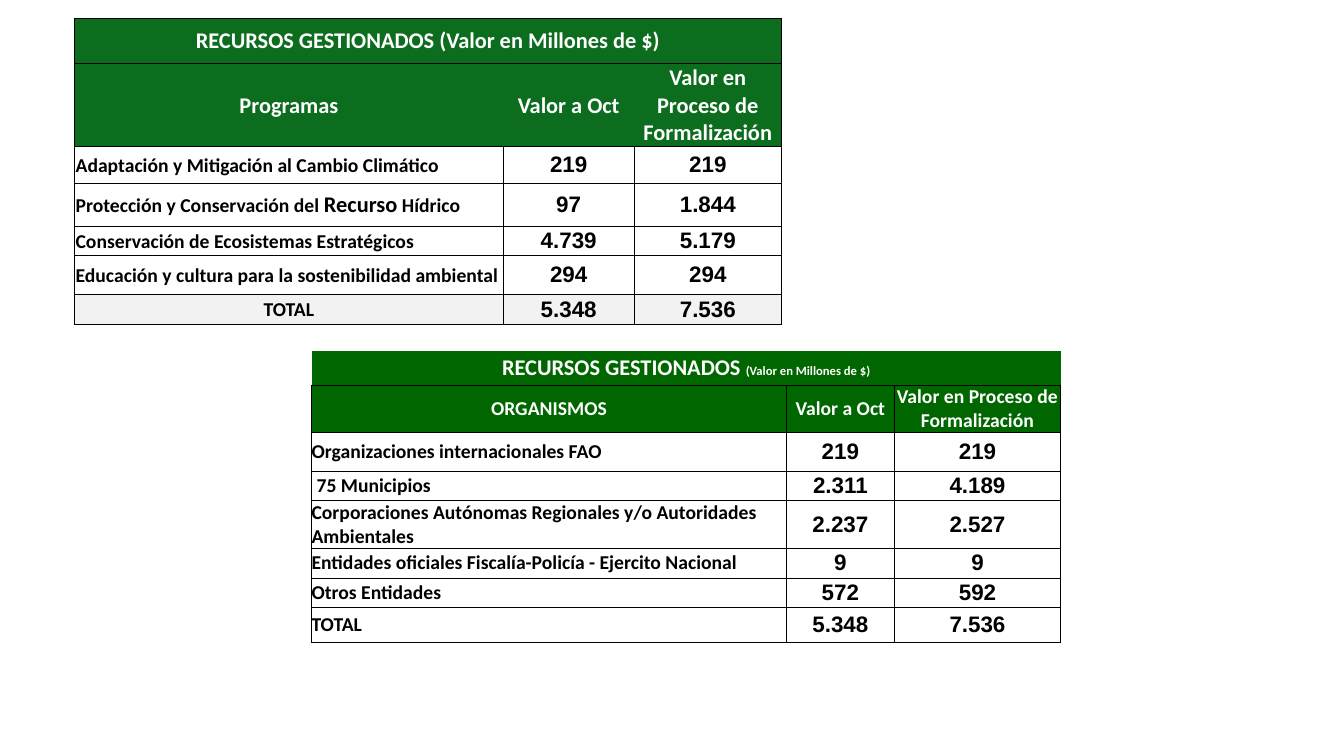
import pptx
import pptx.dml.color
import pptx.enum.text
import pptx.oxml
import pptx.oxml.ns
import pptx.util
from lxml import etree

RGBColor = pptx.dml.color.RGBColor
Inches = pptx.util.Inches
Pt = pptx.util.Pt
CENTER = pptx.enum.text.PP_ALIGN.CENTER
LEFT = pptx.enum.text.PP_ALIGN.LEFT

BLACK = RGBColor(0x00, 0x00, 0x00)
WHITE = RGBColor(0xFF, 0xFF, 0xFF)
GRAY = RGBColor(0xF2, 0xF2, 0xF2)
PROGRAM_GREEN = RGBColor(0x0C, 0x6D, 0x1F)
ORGANISM_GREEN = RGBColor(0x00, 0x66, 0x00)
NO_STYLE = "{2D5ABB26-0587-4C30-8999-92F81FD0307C}"

# A label is a list of (text, size) runs.
PROGRAMS = {
    "position": (0.74, 0.18),
    "columns": (4.25, 1.3, 1.46),
    "rows": (0.45, 0.8, 0.36, 0.43, 0.29, 0.39, 0.29),
    "title": [("RECURSOS GESTIONADOS (Valor en Millones de $)", 16)],
    "title_sides": "LRTB",
    "header": ("Programas", "Valor a Oct", "Valor en Proceso de Formalización"),
    "header_size": 16,
    "header_grid": False,
    "header_fill": PROGRAM_GREEN,
    "body_fill": WHITE,
    "total_fill": GRAY,
    "total_alignment": CENTER,
    "inset": 0.01,
    "indented_rows": (),
    "body": [
        ([("Adaptación y Mitigación al Cambio Climático", 14)], "219", "219"),
        ([("Protección y Conservación del ", 14), ("Recurso", 16), (" Hídrico", 14)], "97", "1.844"),
        ([("Conservación de Ecosistemas Estratégicos", 14)], "4.739", "5.179"),
        ([("Educación y cultura para la sostenibilidad ambiental", 14)], "294", "294"),
        ([("TOTAL", 14)], "5.348", "7.536"),
    ],
}
ORGANISMS = {
    "position": (3.09, 3.48),
    "columns": (4.71, 1.07, 1.65),
    "rows": (0.34, 0.47, 0.38, 0.29, 0.48, 0.29, 0.29, 0.35),
    "title": [("RECURSOS GESTIONADOS ", 16), ("(Valor en Millones de $)", 9)],
    "title_sides": "B",
    "header": ("ORGANISMOS", "Valor a Oct", "Valor en Proceso de Formalización"),
    "header_size": 14,
    "header_grid": True,
    "header_fill": ORGANISM_GREEN,
    "body_fill": None,
    "total_fill": None,
    "total_alignment": LEFT,
    "inset": 0,
    "indented_rows": (1,),
    "body": [
        ([("Organizaciones internacionales FAO", 14)], "219", "219"),
        ([("75 Municipios", 14)], "2.311", "4.189"),
        ([("Corporaciones Autónomas Regionales y/o Autoridades Ambientales", 14)], "2.237", "2.527"),
        ([("Entidades oficiales Fiscalía-Policía - Ejercito Nacional", 14)], "9", "9"),
        ([("Otros Entidades", 14)], "572", "592"),
        ([("TOTAL", 14)], "5.348", "7.536"),
    ],
}


def set_borders(cell, sides):
    """Draw thin black lines on the given sides (L, R, T, B) and none on the others."""
    properties = cell._tc.get_or_add_tcPr()
    for side in "LRTB":
        line = etree.SubElement(properties, pptx.oxml.ns.qn(f"a:ln{side}"), w=str(Pt(0.5)))
        if side in sides:
            fill = etree.SubElement(line, pptx.oxml.ns.qn("a:solidFill"))
            etree.SubElement(fill, pptx.oxml.ns.qn("a:srgbClr"), val=str(BLACK))
        else:
            etree.SubElement(line, pptx.oxml.ns.qn("a:noFill"))


def format_cell(cell, sides, fill, inset):
    set_borders(cell, sides)
    if fill is None:
        cell.fill.background()
    else:
        cell.fill.solid()
        cell.fill.fore_color.rgb = fill
    cell.vertical_anchor = pptx.enum.text.MSO_ANCHOR.MIDDLE
    cell.margin_left = cell.margin_right = cell.margin_top = Inches(inset)
    cell.margin_bottom = 0


def write_text(cell, runs, font_name, color, alignment):
    paragraph = cell.text_frame.paragraphs[0]
    paragraph.alignment = alignment
    paragraph.font.name = font_name
    paragraph.font.bold = True
    paragraph.font.color.rgb = color
    paragraph.font.size = Pt(runs[0][1])
    for text, size in runs:
        run = paragraph.add_run()
        run.text = text
        if size != runs[0][1]:
            run.font.size = Pt(size)


def outer_sides(column, last_column):
    return "TB" + "L" * (column == 0) + "R" * (column == last_column)


def add_resource_table(slide, content):
    widths, heights = content["columns"], content["rows"]
    left, top = content["position"]
    frame = slide.shapes.add_table(
        len(heights), len(widths), Inches(left), Inches(top),
        Inches(sum(widths)), Inches(sum(heights)))
    table = frame.table
    table.first_row = table.horz_banding = False
    table._tbl.tblPr.find(pptx.oxml.ns.qn("a:tableStyleId")).text = NO_STYLE
    for column, width in zip(table.columns, widths):
        column.width = Inches(width)
    for row, height in zip(table.rows, heights):
        row.height = Inches(height)

    inset, header_fill = content["inset"], content["header_fill"]
    last_column = len(widths) - 1
    title = table.cell(0, 0)
    title.merge(table.cell(0, last_column))
    write_text(title, content["title"], "Calibri", WHITE, CENTER)
    for index, heading in enumerate(content["header"]):
        format_cell(table.cell(0, index), content["title_sides"], header_fill, inset)
        cell = table.cell(1, index)
        sides = "LRTB" if content["header_grid"] else outer_sides(index, last_column)
        format_cell(cell, sides, header_fill, inset)
        write_text(cell, [(heading, content["header_size"])], "Calibri", WHITE, CENTER)

    for index, (label, *values) in enumerate(content["body"]):
        is_total = index == len(content["body"]) - 1
        fill = content["total_fill" if is_total else "body_fill"]
        cell = table.cell(index + 2, 0)
        format_cell(cell, "LRTB", fill, inset)
        if index in content["indented_rows"]:
            cell.margin_left = Inches(0.05)
        write_text(cell, label, "Calibri", BLACK, content["total_alignment"] if is_total else LEFT)
        for column, value in enumerate(values, start=1):
            cell = table.cell(index + 2, column)
            format_cell(cell, "LRTB", fill, 0)
            write_text(cell, [(value, 16)], "Arial", BLACK, CENTER)


def main():
    presentation = pptx.Presentation()
    presentation.slide_width = Inches(13.33)
    presentation.slide_height = Inches(7.5)
    slide = presentation.slides.add_slide(presentation.slide_layouts[6])
    for content in (PROGRAMS, ORGANISMS):
        add_resource_table(slide, content)
    presentation.save("out.pptx")


if __name__ == "__main__":
    main()
